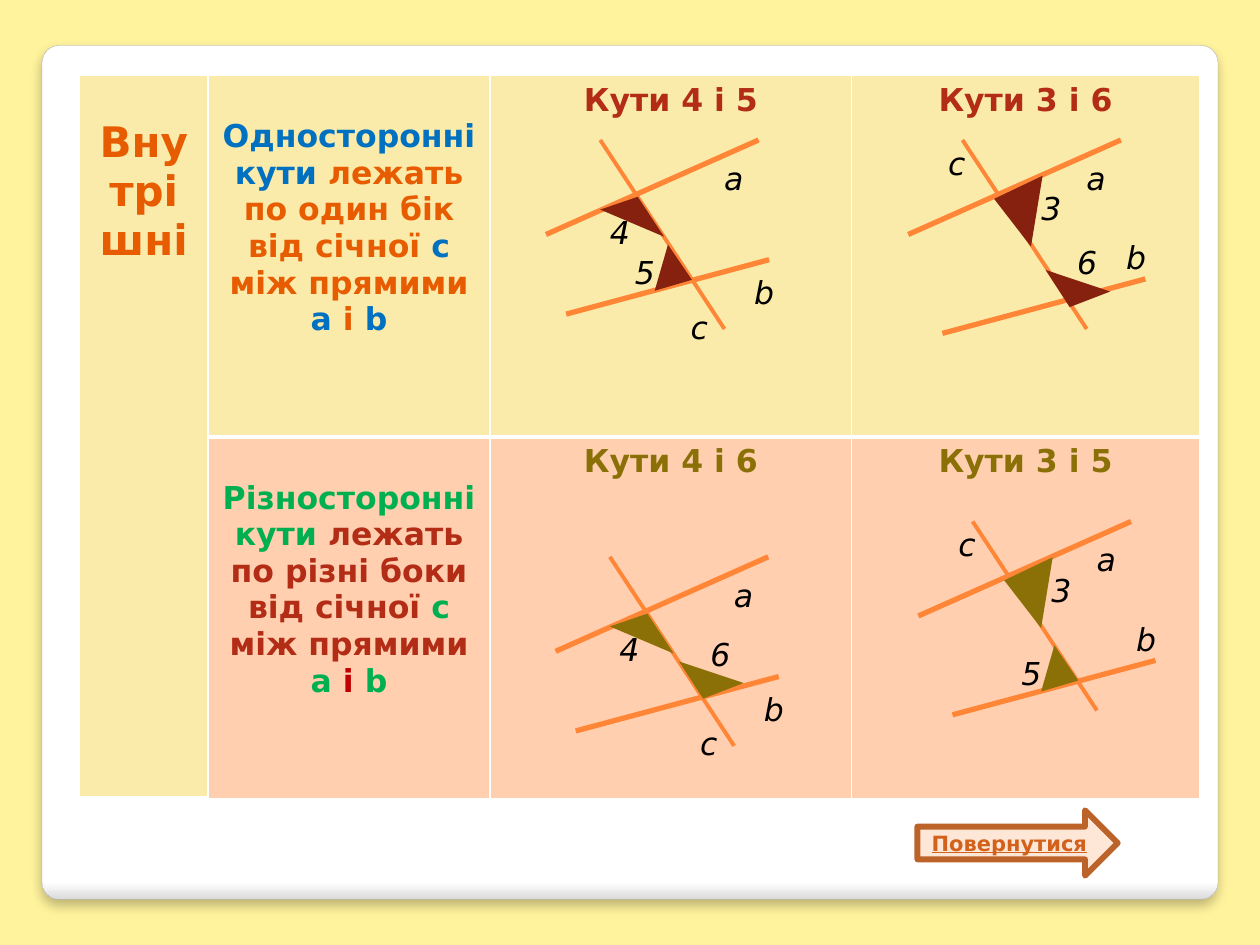
from pptx import Presentation
from pptx.dml.color import RGBColor
from pptx.enum.shapes import MSO_CONNECTOR, MSO_SHAPE
from pptx.enum.text import MSO_ANCHOR, PP_ALIGN
from pptx.oxml import parse_xml
from pptx.oxml.ns import nsdecls
from pptx.util import Pt

FONT = "DejaVu Sans"
PAGE = RGBColor(0xFF, 0xF3, 0x9D)
WHITE = RGBColor(0xFF, 0xFF, 0xFF)
GREY = RGBColor(0xDA, 0xDA, 0xDA)
EDGE = RGBColor(0xA4, 0xA4, 0xA4)
BLACK = RGBColor(0, 0, 0)
CREAM = RGBColor(0xFB, 0xEB, 0xAB)
PEACH = RGBColor(0xFF, 0xCF, 0xAF)
ORANGE = RGBColor(0xE7, 0x5C, 0x01)
BLUE = RGBColor(0x00, 0x70, 0xC0)
GREEN = RGBColor(0x00, 0xB0, 0x50)
RED = RGBColor(0xB3, 0x2C, 0x16)
CRIMSON = RGBColor(0xC0, 0, 0)
OLIVE = RGBColor(0x8A, 0x70, 0x07)
MAROON = RGBColor(0x86, 0x21, 0x10)
RAY = RGBColor(0xFF, 0x86, 0x36)
BLUSH = RGBColor(0xFF, 0xE7, 0xD7)
RUST = RGBColor(0xBC, 0x63, 0x29)
LINK = RGBColor(0xD2, 0x61, 0x1C)

# Table: (row, column, fill, size, top margin, runs)
COLS = [73.4, 161.3, 206.6, 198.7]
ROWS = [206.6, 206.6]
HEAD, LOW = 3.6, 24.6
CELLS = [
    (0, 0, CREAM, 24, LOW, [("Внутрішні", ORANGE)]),
    (0, 1, CREAM, 18, LOW, [
        ("Односторонні кути", BLUE), (" лежать по один бік від січної ", ORANGE),
        ("с ", BLUE), ("між прямими ", ORANGE), ("а", BLUE), (" і ", ORANGE),
        ("b", BLUE)]),
    (0, 2, CREAM, 18, HEAD, [("Кути 4 і 5", RED)]),
    (0, 3, CREAM, 18, HEAD, [("Кути 3 і 6", RED)]),
    (1, 1, PEACH, 18, LOW, [
        ("Різносторонні кути", GREEN), (" лежать по різні боки від січної ", RED),
        ("с", GREEN), (" між прямими ", RED), ("а ", GREEN), ("і ", CRIMSON),
        ("b", GREEN)]),
    (1, 2, PEACH, 18, HEAD, [("Кути 4 і 6", OLIVE)]),
    (1, 3, PEACH, 18, HEAD, [("Кути 3 і 5", OLIVE)]),
]

# Angles, from the top of the secant: triangle box, turn, apex, label place
ANGLES = {
    "3": ((9.5, 26, 41, 25.2), 279.3, 0.574, (39.6, 26)),
    "4": ((1.4, 33, 39.6, 15.1), 23, 0.426, (0, 39.6)),
    "5": ((30.2, 66.2, 27.4, 18.7), 106, 0.568, (14.4, 62.6)),
    "6": ((36, 65.5, 38.9, 15.8), 198.5, 0.492, (52, 42.5)),
}
# Names of the lines: secant label and line b label, for each layout
NEAR = {"c": (45.4, 93.6), "а": (65.2, 8.6), "b": (82.5, 74)}
FAR = {"c": (-14.4, 0), "а": (65.2, 8.6), "b": (88, 54)}
# Figures: secant top, colour, upper angle, lower angle, shift of line b,
# shift of lower angle, line names
FIGS = [
    (343, 80, MAROON, "4", "5", (0, 0), (0, 0), NEAR),
    (348.5, 318.2, OLIVE, "4", "6", (0, 0), (0, 0), NEAR),
    (550, 80, MAROON, "3", "6", (8, 11), (8, 14.5), FAR),
    (555.8, 298, OLIVE, "3", "5", (8, 11), (8, 11), FAR),
]


def write(para, text, size, color, bold=False, slant=False, under=False):
    para.alignment = PP_ALIGN.CENTER
    run = para.add_run()
    run.text = text
    font = run.font
    font.name, font.size, font.bold = FONT, Pt(size), bold
    font.italic, font.underline = slant, under
    font.color.rgb = color


def shape(host, kind, box, fill):
    part = host.add_shape(kind, *map(Pt, box))
    part.shadow.inherit = False
    part.fill.solid()
    part.fill.fore_color.rgb = fill
    part.line.fill.background()
    return part


def plain(frame):
    frame.word_wrap = False
    frame.margin_left = frame.margin_right = 0
    frame.margin_top = frame.margin_bottom = 0
    frame.vertical_anchor = MSO_ANCHOR.MIDDLE
    return frame.paragraphs[0]


def ray(host, start, end, width):
    line = host.add_connector(MSO_CONNECTOR.STRAIGHT, *map(Pt, start + end))
    line.line.color.rgb = RAY
    line.line.width = Pt(width)
    line._element.spPr.append(parse_xml(f"<a:effectLst {nsdecls('a')}/>"))


def label(host, text, x, y):
    box = host.add_textbox(Pt(x), Pt(y), Pt(22.3), Pt(25.9))
    write(plain(box.text_frame), text, 18, BLACK, slant=True)


def border(cell, row):
    for side in "LRTB":
        thick = (row, side) in ((0, "B"), (1, "T"))
        cell._tc.get_or_add_tcPr().append(parse_xml(
            f'<a:ln{side} {nsdecls("a")} w="{Pt(3 if thick else 1)}"><a:solidFill>'
            f'<a:srgbClr val="{WHITE}"/></a:solidFill></a:ln{side}>'))


def figure(slide, x, y, color, top, low, drop, move, names):
    group = slide.shapes.add_group_shape().shapes
    dx, dy = x + drop[0], y + drop[1]
    ray(group, (x, y), (x + 71, y + 108), 2.25)
    ray(group, (x + 90.5, y), (x - 31, y + 54), 3)
    ray(group, (dx + 96.5, dy + 68.4), (dx - 19.5, dy + 99.5), 3)
    for name, (lx, ly) in names.items():
        label(group, name, x + lx, y + ly)
    for name, (sx, sy) in ((top, (0, 0)), (low, move)):
        (tx, ty, wide, high), turn, apex, (lx, ly) = ANGLES[name]
        box = (x + sx + tx, y + sy + ty, wide, high)
        wedge = shape(group, MSO_SHAPE.ISOSCELES_TRIANGLE, box, color)
        wedge.adjustments[0] = apex
        wedge.rotation = turn
        label(group, name, x + sx + lx, y + sy + ly)


def main():
    deck = Presentation()
    deck.slide_width, deck.slide_height = Pt(720), Pt(540)
    slide = deck.slides.add_slide(deck.slide_layouts[6])
    slide.background.fill.solid()
    slide.background.fill.fore_color.rgb = PAGE

    # White panel with a darker lower edge and a soft shadow
    panel = shape(slide.shapes, MSO_SHAPE.ROUNDED_RECTANGLE, (24, 26, 672, 488), WHITE)
    panel.adjustments[0] = 0.02
    panel.fill.gradient()
    panel.fill.gradient_angle = 270
    for stop, place, color in zip(panel.fill.gradient_stops, (0.98, 1), (WHITE, GREY)):
        stop.position, stop.color.rgb = place, color
    panel.line.color.rgb = EDGE
    panel.line.width = Pt(0.16)
    panel._element.spPr.effectLst.append(parse_xml(
        f'<a:outerShdw {nsdecls("a")} blurRad="{Pt(6)}" dist="{Pt(4)}" dir="5400000">'
        '<a:srgbClr val="000000"><a:alpha val="25000"/></a:srgbClr></a:outerShdw>'))

    # Table
    table = slide.shapes.add_table(
        2, 4, Pt(45.4), Pt(43.2), Pt(sum(COLS)), Pt(sum(ROWS))).table
    for col, wide in zip(table.columns, COLS):
        col.width = Pt(wide)
    for row, high in zip(table.rows, ROWS):
        row.height = Pt(high)
    table.cell(0, 0).merge(table.cell(1, 0))
    for row, col, fill, size, top, runs in CELLS:
        cell = table.cell(row, col)
        border(cell, row)
        cell.fill.solid()
        cell.fill.fore_color.rgb = fill
        cell.margin_top = Pt(top)
        for text, color in runs:
            write(cell.text_frame.paragraphs[0], text, size, color, bold=True)
    table.cell(0, 0)._tc.tcPr.set("vert", "wordArtVert")

    # Angle figures
    for fig in FIGS:
        figure(slide, *fig)

    # Return arrow
    arrow = shape(slide.shapes, MSO_SHAPE.RIGHT_ARROW, (524.2, 463, 114.5, 37.4), BLUSH)
    arrow.line.color.rgb = RUST
    arrow.line.width = Pt(3.35)
    write(plain(arrow.text_frame), "Повернутися", 12, LINK, bold=True, under=True)

    deck.save("out.pptx")


if __name__ == "__main__":
    main()
